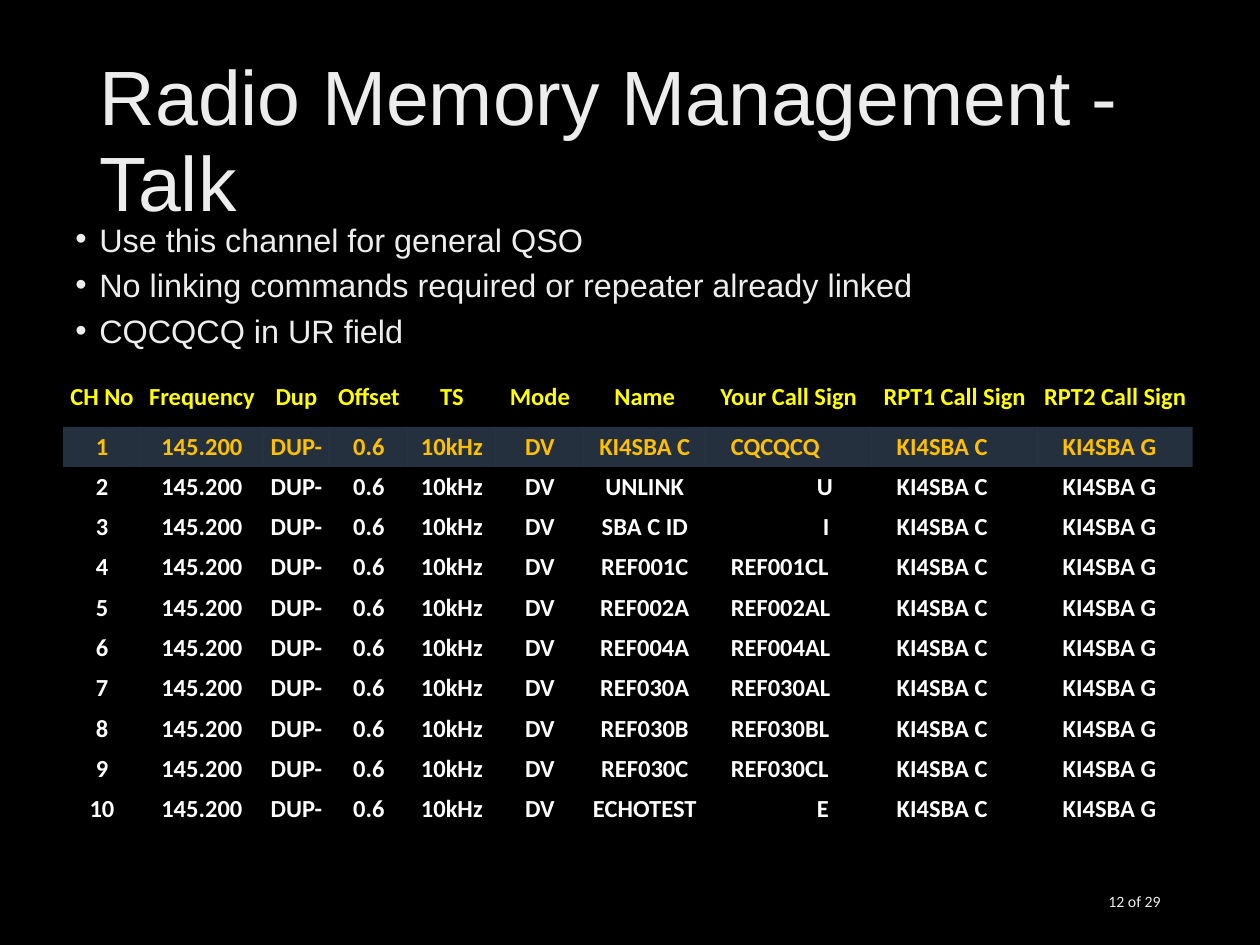
import pptx
import pptx.util
import pptx.dml.color
import pptx.enum.text
import pptx.oxml.ns
from dataclasses import dataclass
from lxml import etree

PX = 914400 // 126  # EMU in one px
ALIGN = pptx.enum.text.PP_ALIGN
MID = pptx.enum.text.MSO_ANCHOR.MIDDLE
PALE, GOLD = "EDEDED", "FFC000"
PLAIN = "{2D5ABB26-0587-4C30-8999-92F81FD0307C}"  # table style: no grid
qn = pptx.oxml.ns.qn


@dataclass
class Box:
    left: int
    top: int
    width: int
    height: int

    def emu(self) -> list:
        return [n * PX for n in (self.left, self.top, self.width, self.height)]


@dataclass
class Chan:
    name: str
    call: str
    inset: int = 25


HEADS = ["CH No", "Frequency", "Dup", "Offset", "TS", "Mode", "Name",
         "Your Call Sign", "RPT1 Call Sign", "RPT2 Call Sign"]
COLS = [78, 122, 67, 78, 88, 88, 122, 166, 166, 155]
HEAD_H, BODY_H = 59, 403
SAME = ["145.200", "DUP-", "0.6", "10kHz", "DV"]
REFS = ["REF001C", "REF002A", "REF004A", "REF030A", "REF030B", "REF030C"]
CHANS = [Chan("KI4SBA C", "CQCQCQ"), Chan("UNLINK", "U", 111),
         Chan("SBA C ID", "I", 117),
         *[Chan(ref, ref + "L") for ref in REFS],
         Chan("ECHOTEST", "E", 111)]
NOTES = ["Use this channel for general QSO",
         "No linking commands required or repeater already linked",
         "CQCQCQ in UR field"]


def rgb(code: str) -> pptx.dml.color.RGBColor:
    return pptx.dml.color.RGBColor.from_string(code)


def write(para, text: str, *, size: float, face: str = "Arial",
          color: str = PALE, bold: bool = False, align=ALIGN.LEFT,
          lines: float = 1.0, before: float = 0, bullet: bool = False) -> None:
    """Fill one paragraph and format it."""
    if bullet:
        props = para._p.get_or_add_pPr()
        props.set("marL", str(24 * PX))
        props.set("indent", str(-24 * PX))
        etree.SubElement(props, qn("a:buFont")).set("typeface", "Arial")
        etree.SubElement(props, qn("a:buChar")).set("char", "•")
    para.alignment = align
    para.line_spacing = lines
    para.space_before = pptx.util.Pt(before)
    run = para.add_run()
    run.text = text
    font = run.font
    font.size, font.name, font.bold = pptx.util.Pt(size), face, bold
    font.color.rgb = rgb(color)


def add_box(slide, box: Box):
    frame = slide.shapes.add_textbox(*box.emu()).text_frame
    frame.word_wrap = True
    return frame


def fill_cell(cell, text: str, color: str, inset: int = 0,
              lit: bool = False) -> None:
    """Write a table cell; an inset sets the text to the left."""
    cell.margin_left = inset * PX
    cell.margin_right = cell.margin_top = cell.margin_bottom = 0
    cell.vertical_anchor = MID
    write(cell.text_frame.paragraphs[0], text, size=14, face="Calibri",
          color=color, bold=True, align=ALIGN.LEFT if inset else ALIGN.CENTER)
    if lit:
        cell.fill.solid()
        cell.fill.fore_color.rgb = rgb("99CCFF")
        tint = cell._tc.tcPr.find(".//" + qn("a:srgbClr"))
        etree.SubElement(tint, qn("a:alpha")).set("val", "24000")
    else:
        cell.fill.background()


def add_grid(slide) -> None:
    count = len(CHANS)
    box = Box(63, 368, sum(COLS), HEAD_H + BODY_H)
    grid = slide.shapes.add_table(count + 1, len(COLS), *box.emu()).table
    grid.first_row = grid.horz_banding = False
    grid._tbl.tblPr.find(qn("a:tableStyleId")).text = PLAIN
    for col, width in zip(grid.columns, COLS):
        col.width = width * PX

    # Header row
    grid.rows[0].height = HEAD_H * PX
    for col, head in enumerate(HEADS):
        fill_cell(grid.cell(0, col), head, "FFFF00")

    # Channel rows share the body height; the first is lit
    for num, chan in enumerate(CHANS, 1):
        high = num * BODY_H // count - (num - 1) * BODY_H // count
        grid.rows[num].height = high * PX
        texts = [str(num), *SAME, chan.name, chan.call, "KI4SBA C", "KI4SBA G"]
        insets = [0] * 7 + [chan.inset, 25, 25]
        lit = num == 1
        for col, (text, inset) in enumerate(zip(texts, insets)):
            fill_cell(grid.cell(num, col), text, GOLD if lit else "FFFFFF",
                      inset, lit)


def main() -> None:
    deck = pptx.Presentation()
    deck.slide_width, deck.slide_height = 1260 * PX, 945 * PX
    slide = deck.slides.add_slide(deck.slide_layouts[5])
    slide.background.fill.solid()
    slide.background.fill.fore_color.rgb = rgb("000000")

    # Title
    title = slide.shapes.title
    title.left, title.top, title.width, title.height = Box(87, 51, 1086, 183).emu()
    frame = title.text_frame
    frame.word_wrap = True
    frame.auto_size = pptx.enum.text.MSO_AUTO_SIZE.NONE
    frame.vertical_anchor = MID
    write(frame.paragraphs[0], "Radio Memory Management - Talk", size=44, lines=0.93)

    # Bullets
    frame = add_box(slide, Box(63, 221, 1134, 136))
    for num, note in enumerate(NOTES):
        para = frame.add_paragraph() if num else frame.paragraphs[0]
        write(para, note, size=18.5, lines=0.8, before=8.4 if num else 0,
              bullet=True)

    # Channel table
    add_grid(slide)

    # Page number
    frame = add_box(slide, Box(890, 876, 283, 50))
    frame.vertical_anchor = MID
    write(frame.paragraphs[0], "12 of 29", size=9, face="Calibri",
          align=ALIGN.RIGHT)

    deck.save("out.pptx")


if __name__ == "__main__":
    main()
